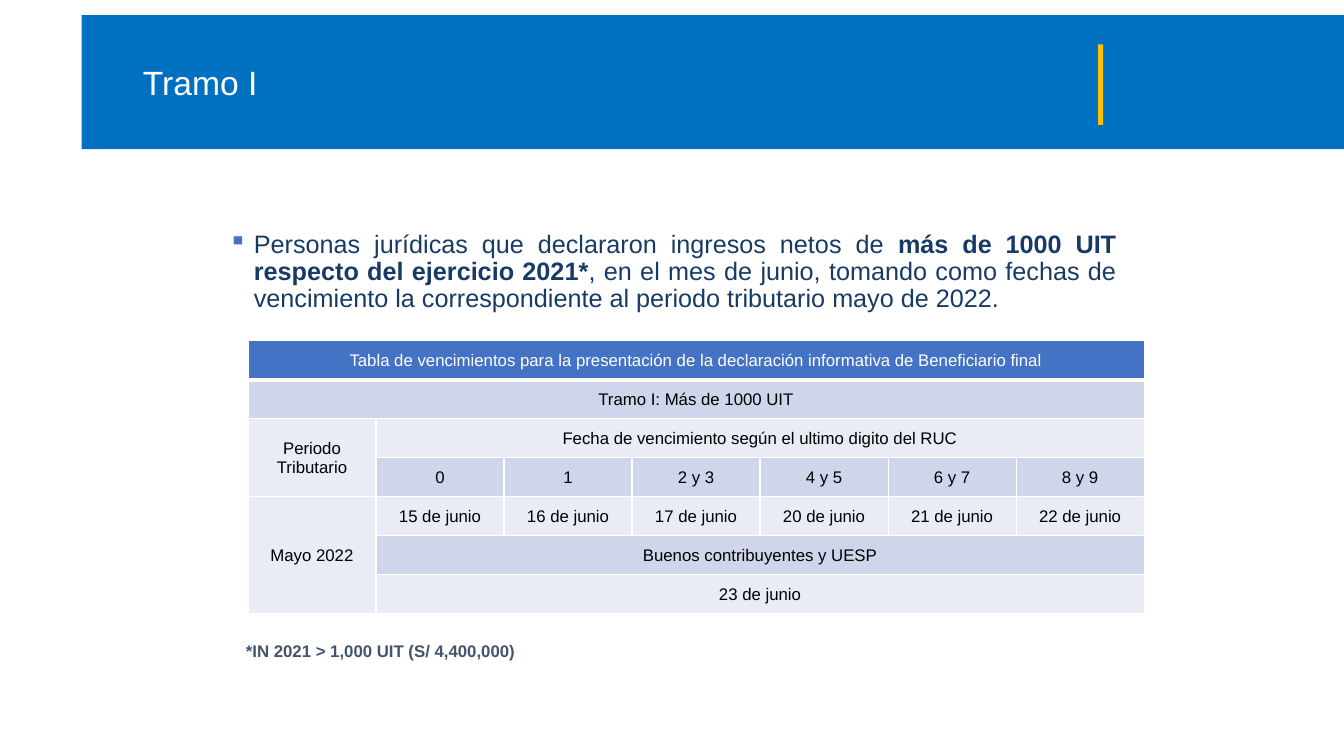
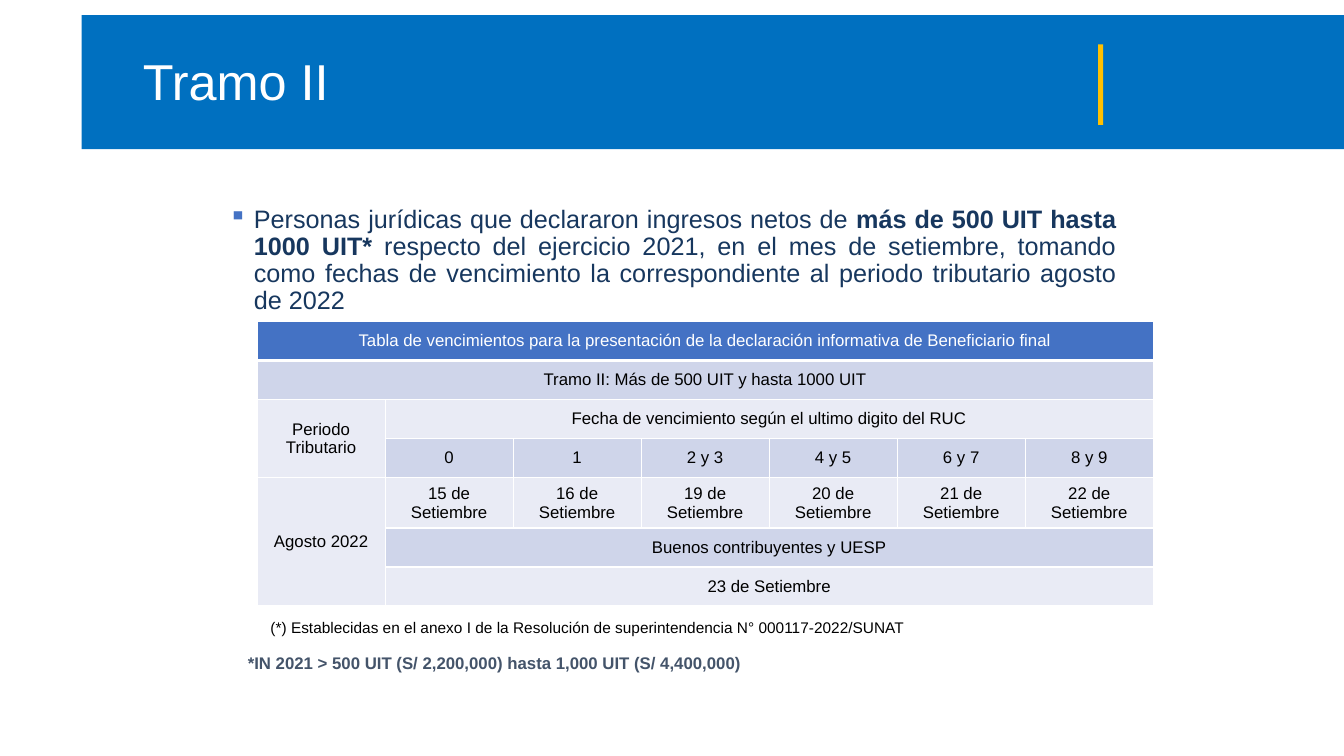
"""Build two slides with the filing dates of each income bracket."""
import dataclasses

import lxml.etree
import pptx
import pptx.dml.color
import pptx.enum.shapes
import pptx.enum.text
import pptx.oxml.ns
import pptx.util

Inches, Pt = pptx.util.Inches, pptx.util.Pt
RGB = pptx.dml.color.RGBColor.from_string
ALIGN, ANCHOR = pptx.enum.text.PP_ALIGN, pptx.enum.text.MSO_ANCHOR
qn = pptx.oxml.ns.qn


@dataclasses.dataclass(frozen=True)
class Theme:
    """Colours and type sizes shared by the slides."""
    font: str = "Arial"
    band: str = "0070C0"
    bar: str = "FFC000"
    white: str = "FFFFFF"
    black: str = "000000"
    accent: str = "4472C4"
    note: str = "44546A"
    row_fills: tuple = ("E9EBF5", "CFD5EA")
    body_size: int = 18
    table_size: int = 12
    note_size: int = 12
    source_size: int = 11


THEME = Theme()
TABLE_TITLE = ("Tabla de vencimientos para la presentación de la declaración "
               "informativa de Beneficiario final")
DIGITS = ["0", "1", "2 y 3", "4 y 5", "6 y 7", "8 y 9"]
MERGES = [(0, 0, 0, 6), (1, 0, 1, 6), (2, 0, 3, 0), (2, 1, 2, 6),
          (4, 0, 6, 0), (5, 1, 5, 6), (6, 1, 6, 6)]

BRACKETS = [
    dict(
        title="Tramo I", title_size=24, body_top=2.25, body_color="183B66",
        body=[("Personas jurídicas que declararon ingresos netos de ", False),
              ("más de 1000 UIT respecto del ejercicio 2021*", True),
              (", en el mes de junio, tomando como fechas de vencimiento la "
               "correspondiente al periodo tributario mayo de 2022.", False)],
        table_at=(2.46, 3.38), bracket="Tramo I: Más de 1000 UIT",
        period="Mayo 2022", month="junio", days=(15, 16, 17, 20, 21, 22),
        note="*IN 2021 > 1,000 UIT (S/ 4,400,000)",
        note_at=(2.34, 6.31, 7.55, 0.81), source=None),
    dict(
        title="Tramo II", title_size=36, body_top=2, body_color="17375E",
        body=[("Personas jurídicas que declararon ingresos netos de ", False),
              ("más de 500 UIT hasta 1000 UIT* ", True),
              ("respecto del ejercicio 2021, en el mes de setiembre, tomando "
               "como fechas de vencimiento la correspondiente al periodo "
               "tributario agosto de 2022", False)],
        table_at=(2.55, 3.19),
        bracket="Tramo II: Más de 500 UIT y hasta 1000 UIT",
        period="Agosto 2022", month="Setiembre",
        days=(15, 16, 19, 20, 21, 22),
        note="*IN 2021 > 500 UIT (S/ 2,200,000) hasta 1,000 UIT (S/ 4,400,000)",
        note_at=(2.36, 6.43, 8.8, 0.5),
        source="(*) Establecidas en el anexo I de la Resolución de "
               "superintendencia N° 000117-2022/SUNAT"),
]


def apply(target, formats):
    """Set each attribute named in a dict of format values."""
    for name, value in formats.items():
        setattr(target, name, value)


def add_run(p, text, size, color, bold=False):
    """Add one formatted run to a paragraph."""
    r = p.add_run()
    r.text = text
    apply(r.font, {"name": THEME.font, "size": Pt(size), "bold": bold})
    r.font.color.rgb = RGB(color)


def add_block(s, at, color):
    """Add a plain filled rectangle."""
    sp = s.shapes.add_shape(pptx.enum.shapes.MSO_SHAPE.RECTANGLE,
                            *map(Inches, at))
    sp.shadow.inherit = False
    sp.fill.solid()
    sp.fill.fore_color.rgb = RGB(color)
    sp.line.fill.background()


def add_text(s, at, runs, size, color, frame=None, para=None):
    """Add a one-paragraph text box and return the paragraph."""
    tf = s.shapes.add_textbox(*map(Inches, at)).text_frame
    apply(tf, {"word_wrap": True, **(frame or {})})
    p = tf.paragraphs[0]
    apply(p, para or {})
    for text, bold in runs:
        add_run(p, text, size, color, bold)
    return p


def add_bullet(p):
    """Give a paragraph a square bullet with a hanging indent."""
    ppr = p._p.get_or_add_pPr()
    apply_indent = {"marL": Inches(0.25), "indent": -Inches(0.25)}
    for name, value in apply_indent.items():
        ppr.set(name, str(value))
    color = lxml.etree.SubElement(ppr, qn("a:buClr"))
    lxml.etree.SubElement(color, qn("a:srgbClr"), val=THEME.accent)
    lxml.etree.SubElement(ppr, qn("a:buChar"), char="▪")


def set_borders(cell, row):
    """Draw white cell borders, thicker below the header row."""
    tcpr = cell._tc.get_or_add_tcPr()
    thick = {0: "lnB", 1: "lnT"}.get(row)
    for side in ("lnL", "lnR", "lnT", "lnB"):
        width = Pt(3 if side == thick else 1)
        line = lxml.etree.SubElement(tcpr, qn(f"a:{side}"), w=str(width))
        fill = lxml.etree.SubElement(line, qn("a:solidFill"))
        lxml.etree.SubElement(fill, qn("a:srgbClr"), val=THEME.white)


def add_due_dates(s, b):
    """Add the table of due dates of one bracket."""
    month = b["month"]
    rows = [
        [TABLE_TITLE],
        [b["bracket"]],
        ["Periodo Tributario",
         "Fecha de vencimiento según el ultimo digito del RUC"],
        ["", *DIGITS],
        [b["period"], *(f"{day} de {month}" for day in b["days"])],
        ["", "Buenos contribuyentes y UESP"],
        ["", f"23 de {month}"],
    ]
    at = (*b["table_at"], 8.89, 2.71)
    table = s.shapes.add_table(len(rows), 7, *map(Inches, at)).table
    apply(table, {"first_row": False, "horz_banding": False})
    for top, left, bottom, right in MERGES:
        table.cell(top, left).merge(table.cell(bottom, right))
    for i, texts in enumerate(rows):
        fill = THEME.accent if i == 0 else THEME.row_fills[i % 2]
        color = THEME.white if i == 0 else THEME.black
        for j in range(7):
            cell = table.cell(i, j)
            set_borders(cell, i)
            cell.fill.solid()
            cell.fill.fore_color.rgb = RGB(fill)
            cell.vertical_anchor = ANCHOR.MIDDLE
            if j < len(texts) and texts[j]:
                p = cell.text_frame.paragraphs[0]
                p.alignment = ALIGN.CENTER
                add_run(p, texts[j], THEME.table_size, color)


def add_header(s, title, size):
    """Add the blue band with its yellow bar and the title."""
    add_block(s, (0.81, 0.15, 12.52, 1.33), THEME.band)
    add_block(s, (10.89, 0.44, 0.05, 0.8), THEME.bar)
    add_text(s, (1.32, 0.36, 6.1, 0.95), [(title, False)], size, THEME.white,
             {"vertical_anchor": ANCHOR.MIDDLE}, {"line_spacing": 0.9})


def add_bracket_slide(prs, b):
    """Add the slide of one income bracket."""
    s = prs.slides.add_slide(prs.slide_layouts[6])
    add_header(s, b["title"], b["title_size"])
    p = add_text(s, (2.17, b["body_top"], 9, 4.77), b["body"],
                 THEME.body_size, b["body_color"],
                 para={"alignment": ALIGN.JUSTIFY, "line_spacing": 0.9})
    add_bullet(p)
    add_text(s, b["note_at"], [(b["note"], True)], THEME.note_size, THEME.note)
    add_due_dates(s, b)
    if b["source"]:
        add_text(s, (2.55, 6.08, 6.56, 0.29), [(b["source"], False)],
                 THEME.source_size, THEME.black, {"word_wrap": False},
                 {"alignment": ALIGN.CENTER})


def main():
    """Build and save the presentation."""
    prs = pptx.Presentation()
    apply(prs, {"slide_width": Inches(13.33), "slide_height": Inches(7.5)})
    for b in BRACKETS:
        add_bracket_slide(prs, b)
    prs.save("out.pptx")


if __name__ == "__main__":
    main()
